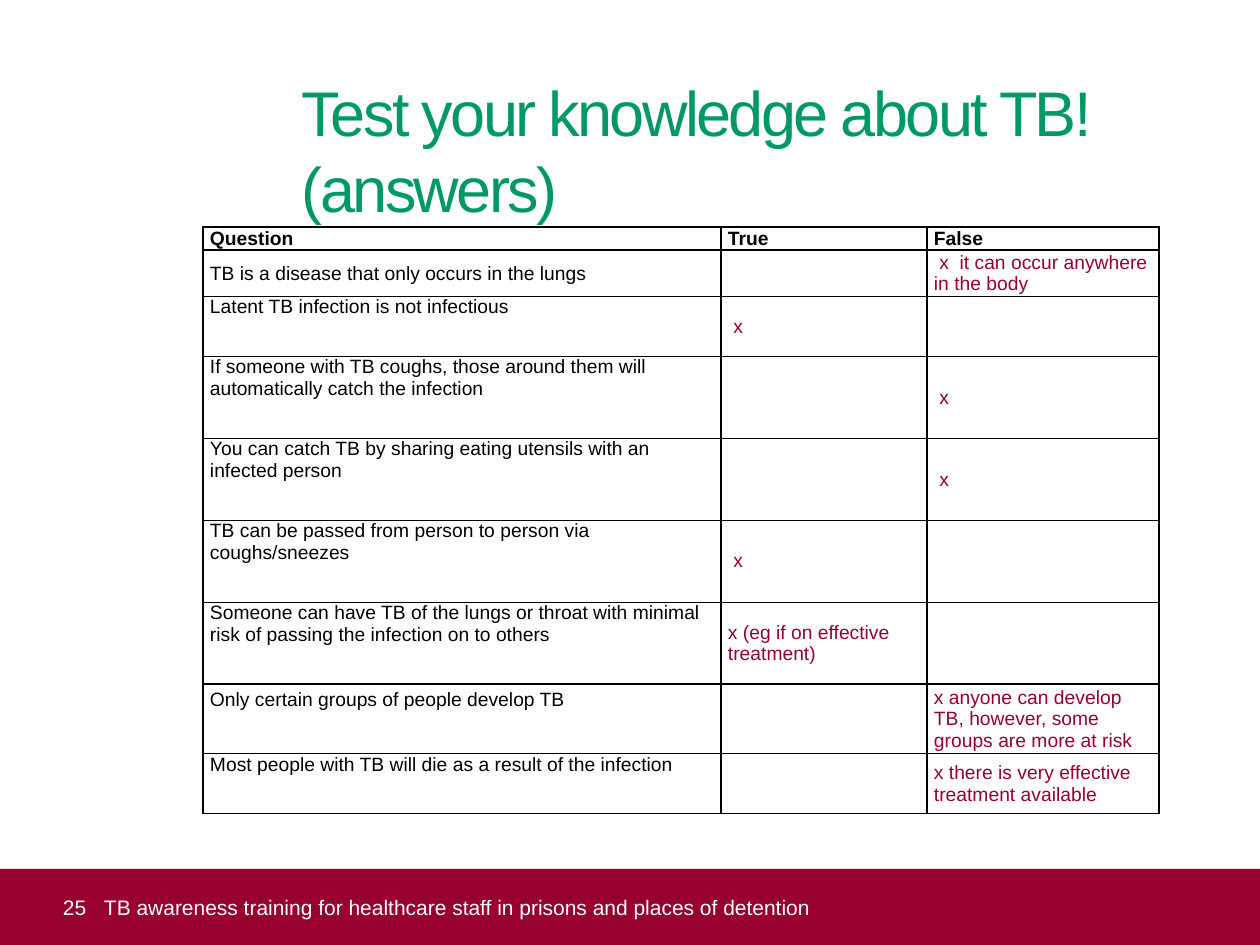
from lxml.etree import SubElement
from pptx import Presentation
from pptx.dml.color import RGBColor
from pptx.enum.shapes import MSO_SHAPE as Shape
from pptx.enum.text import MSO_ANCHOR as Anchor, PP_ALIGN as Align
from pptx.oxml.ns import qn
from pptx.util import Pt

PX = 914400 // 126
GREEN, CRIMSON, BLACK, WHITE = "009966", "98002E", "000000", "FFFFFF"


def rgb(value):
    return RGBColor.from_string(value)


def write(frame, text, size=11, color=BLACK, bold=False, tracking=0,
          anchor=Anchor.MIDDLE, margins=(0, 0, 0, 0)):
    frame.word_wrap = True
    frame.vertical_anchor = anchor
    frame.margin_left, frame.margin_top, frame.margin_right, frame.margin_bottom = (
        margin * PX for margin in margins)
    paragraph = frame.paragraphs[0]
    paragraph.alignment = Align.LEFT
    paragraph.line_spacing = 1.0
    paragraph.font.size = Pt(size)
    if not text:
        return
    run = paragraph.add_run()
    run.text = text
    run.font.name = "Arial"
    run.font.size = Pt(size)
    run.font.bold = bold
    run.font.color.rgb = rgb(color)
    if tracking:
        run.font._element.set("spc", str(tracking))


deck = Presentation()
deck.slide_width, deck.slide_height = 1260 * PX, 945 * PX
slide = deck.slides.add_slide(deck.slide_layouts[6])
shapes = slide.shapes

title = shapes.add_textbox(302 * PX, 74 * PX, 824 * PX, 74 * PX)
write(title.text_frame, "Test your knowledge about TB! (answers)", size=36, color=GREEN,
      tracking=-150, anchor=Anchor.TOP)

footer = shapes.add_shape(Shape.RECTANGLE, 0, 869 * PX, 1260 * PX, 76 * PX)
footer.shadow.inherit = False
footer.fill.solid()
footer.fill.fore_color.rgb = rgb(CRIMSON)
footer.line.fill.background()
write(footer.text_frame, "25", size=12, color=WHITE, margins=(63, 0, 13, 0))

course = shapes.add_textbox(104 * PX, 869 * PX, 1081 * PX, 76 * PX)
write(course.text_frame,
      "TB awareness training for healthcare staff in prisons and places of detention",
      size=12, color=WHITE)

quiz = [
    (23, "Question", "True", "False"),
    (45, "TB is a disease that only occurs in the lungs", "",
     " x  it can occur anywhere in the body"),
    (60, "Latent TB infection is not infectious", " x", ""),
    (82, "If someone with TB coughs, those around them will automatically catch the infection",
     "", " x"),
    (82, "You can catch TB by sharing eating utensils with an infected person", "", " x"),
    (82, "TB can be passed from person to person via coughs/sneezes", " x", ""),
    (82, "Someone can have TB of the lungs or throat with minimal risk of passing "
         "the infection on to others", "x (eg if on effective treatment)", ""),
    (68, "Only certain groups of people develop TB", "",
     "x anyone can develop TB, however, some groups are more at risk"),
    (60, "Most people with TB will die as a result of the infection", "",
     "x there is very effective treatment available"),
]
widths = [518, 206, 232]
answers = shapes.add_table(len(quiz), len(widths), 203 * PX, 227 * PX, sum(widths) * PX,
                           sum(row[0] for row in quiz) * PX).table
answers.first_row = answers.horz_banding = False
for column, width in zip(answers.columns, widths):
    column.width = width * PX

for r, (height, *texts) in enumerate(quiz):
    answers.rows[r].height = height * PX
    for c, text in enumerate(texts):
        cell = answers.cell(r, c)
        top_aligned = c == 0 and r > 1
        write(cell.text_frame, text, color=CRIMSON if r and c else BLACK, bold=r == 0)
        cell.vertical_anchor = Anchor.TOP if top_aligned else Anchor.MIDDLE
        cell.margin_left = cell.margin_right = 7 * PX
        cell.margin_top = 5 * PX if top_aligned and height == 68 else 0
        cell.margin_bottom = 0
        properties = cell._tc.get_or_add_tcPr()
        for side in ("lnL", "lnR", "lnT", "lnB"):
            border = SubElement(properties, qn(f"a:{side}"), w=str(Pt(1)))
            SubElement(SubElement(border, qn("a:solidFill")), qn("a:srgbClr"), val=BLACK)
        cell.fill.background()

deck.save("out.pptx")
